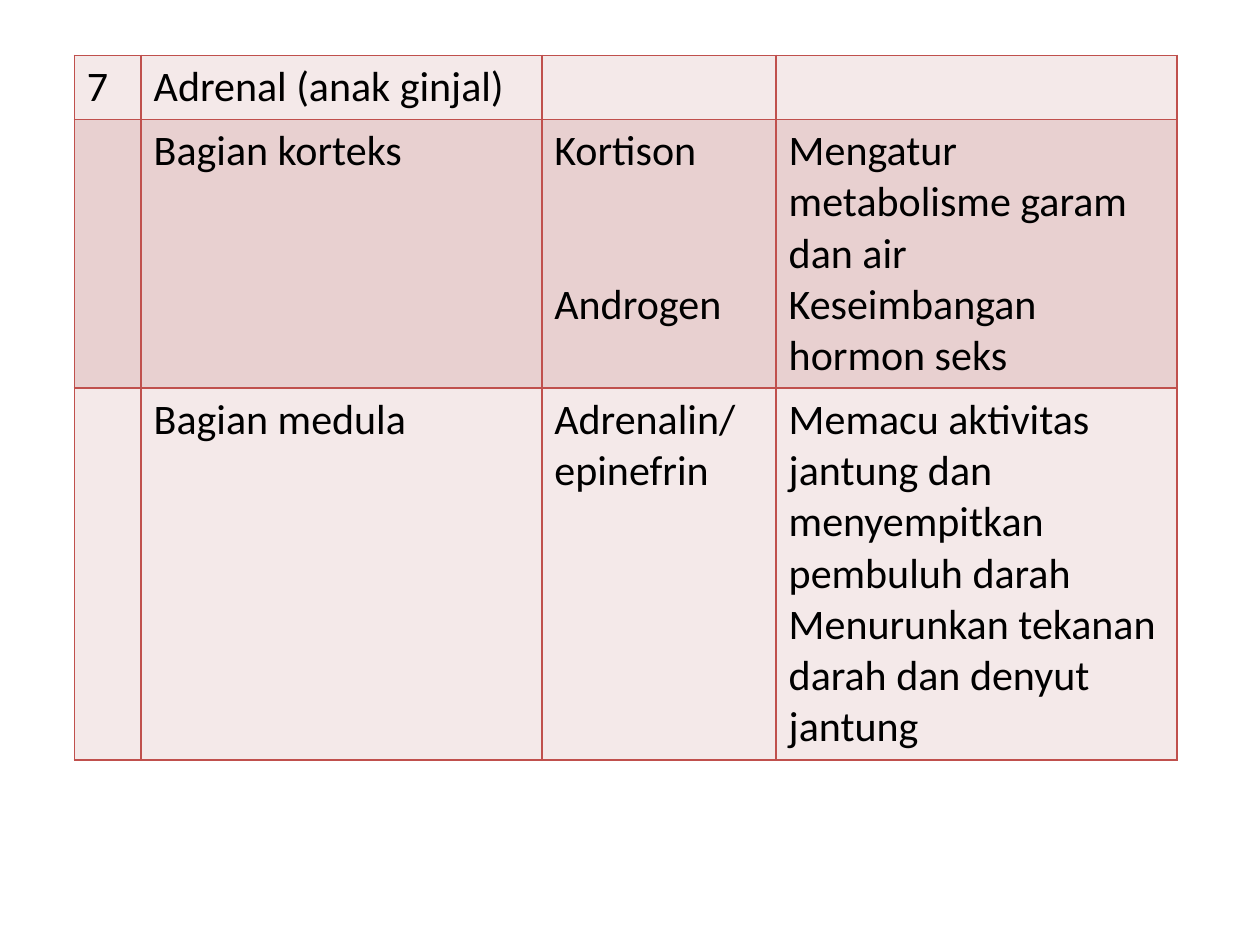
from lxml import etree
from pptx import Presentation
from pptx.dml.color import RGBColor
from pptx.oxml import ns
from pptx.util import Inches, Pt

COLORS = {"border": "C0504D", "light": "F4E9E9", "dark": "E8D0D0", "text": "000000"}
COLUMN_WIDTHS = [0.53, 3.18, 1.86, 3.18]
ROW_HEIGHTS = [0.5, 2.13, 2.95]
GLANDS = [
    ["7", "Adrenal (anak ginjal)", "", ""],
    ["", "Bagian korteks", "Kortison\nAndrogen",
     "Mengatur metabolisme garam dan air\nKeseimbangan hormon seks"],
    ["", "Bagian medula", "Adrenalin/ epinefrin",
     "Memacu aktivitas jantung dan menyempitkan pembuluh darah\n"
     "Menurunkan tekanan darah dan denyut jantung"],
]


def add_borders(cell):
    properties = cell._tc.get_or_add_tcPr()
    for position, side in enumerate(("lnL", "lnR", "lnT", "lnB")):
        line = etree.Element(ns.qn(f"a:{side}"), w=str(Pt(1)))
        fill = etree.SubElement(line, ns.qn("a:solidFill"))
        etree.SubElement(fill, ns.qn("a:srgbClr"), val=COLORS["border"])
        properties.insert(position, line)


prs = Presentation()
prs.slide_width, prs.slide_height = Inches(10), Inches(7.5)
slide = prs.slides.add_slide(prs.slide_layouts[6])

# Hormone table
hormones = slide.shapes.add_table(
    len(ROW_HEIGHTS), len(COLUMN_WIDTHS), Inches(0.59), Inches(0.44),
    Inches(sum(COLUMN_WIDTHS)), Inches(sum(ROW_HEIGHTS))).table
hormones.first_row = False
for column, width in zip(hormones.columns, COLUMN_WIDTHS):
    column.width = Inches(width)
for row, height in zip(hormones.rows, ROW_HEIGHTS):
    row.height = Inches(height)

# Cell text, banded fills and borders
for row_index, gland in enumerate(GLANDS):
    band = COLORS["dark" if row_index % 2 else "light"]
    for column_index, content in enumerate(gland):
        cell = hormones.cell(row_index, column_index)
        cell.text_frame.text = content
        cell.fill.solid()
        cell.fill.fore_color.rgb = RGBColor.from_string(band)
        add_borders(cell)
        for paragraph in cell.text_frame.paragraphs:
            paragraph.font.size = Pt(24)
            for run in paragraph.runs:
                run.font.size = Pt(24)
                run.font.name = "Calibri"
                run.font.color.rgb = RGBColor.from_string(COLORS["text"])

# Align Androgen with its function, two lines lower
androgen = hormones.cell(1, 2).text_frame.paragraphs[1]
androgen.space_before = Pt(58.6)

prs.save("out.pptx")
